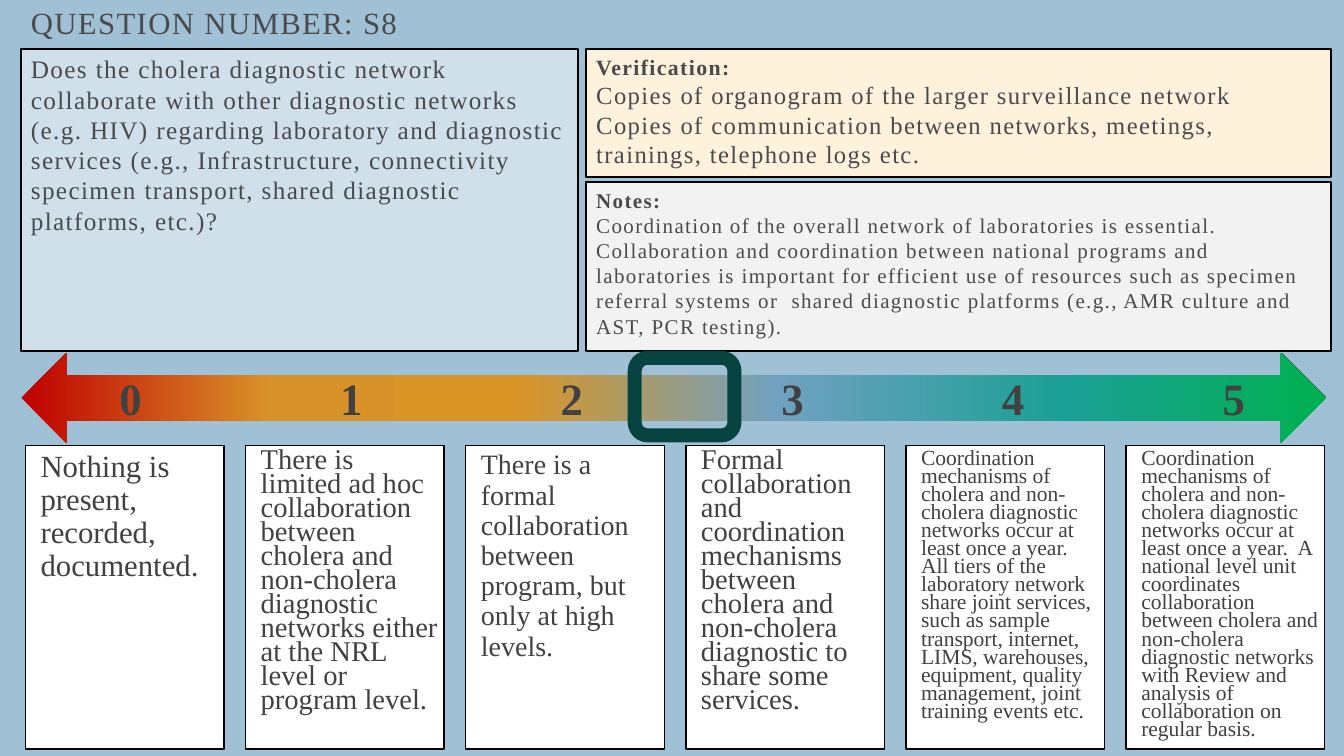
from lxml.etree import SubElement
from pptx import Presentation
from pptx.dml.color import RGBColor
from pptx.enum.shapes import MSO_SHAPE as Kind
from pptx.enum.text import MSO_ANCHOR as Anchor, PP_ALIGN as Align
from pptx.oxml.ns import qn
from pptx.util import Pt

FONT = "Times New Roman"
SKY = RGBColor(0xA0, 0xC1, 0xD5)
ICE = RGBColor(0xCF, 0xE0, 0xEA)
CREAM = RGBColor(0xFE, 0xF2, 0xDD)
PALE = RGBColor(0xF2, 0xF2, 0xF2)
WHITE = RGBColor(0xFF, 0xFF, 0xFF)
BLACK = RGBColor(0, 0, 0)
SLATE = RGBColor(0x4A, 0x4A, 0x4C)
GRAY = RGBColor(0x41, 0x41, 0x42)
PINE = RGBColor(0x07, 0x44, 0x41)
SCALE = [
    (0, RGBColor(0xC0, 0, 0)),
    (19, RGBColor(0xD9, 0x92, 0x29)),
    (38, RGBColor(0xDA, 0x95, 0x27)),
    (58, RGBColor(0x70, 0xA1, 0xC0)),
    (80, RGBColor(0x1A, 0xA0, 0x95)),
    (100, RGBColor(0, 0xB0, 0x50)),
]

# Score cards: text, size, line spacing
CARDS = [
    ("Nothing is present, recorded, documented.", 22, 0.9),
    ("There is limited ad hoc collaboration between cholera and non-cholera "
     "diagnostic networks either at the NRL level or program level.", 20.4, 0.7),
    ("There is a formal collaboration between program, but only at high "
     "levels.", 20, 0.9),
    ("Formal collaboration and coordination mechanisms between cholera and "
     "non-cholera diagnostic to share some services.", 20.4, 0.7),
    ("Coordination mechanisms of cholera and non-cholera diagnostic networks "
     "occur at least once a year.  All tiers of the laboratory network share "
     "joint services, such as sample transport, internet, LIMS, warehouses, "
     "equipment, quality management, joint training events etc.", 15.4, 0.7),
    ("Coordination mechanisms of cholera and non-cholera diagnostic networks "
     "occur at least once a year.  A national level unit coordinates "
     "collaboration between cholera and non-cholera diagnostic networks with "
     "Review and analysis of collaboration on regular basis.", 15.4, 0.7),
]


class Board:
    def __init__(self, slide):
        self.slide = slide
        fill = slide.background.fill
        fill.solid()
        fill.fore_color.rgb = SKY

    def shape(self, kind, box, fill=None, line=None, width=1.5):
        item = self.slide.shapes.add_shape(kind, *map(Pt, box))
        item.shadow.inherit = False
        if fill is None:
            item.fill.background()
        else:
            item.fill.solid()
            item.fill.fore_color.rgb = fill
        if line is None:
            item.line.fill.background()
        else:
            item.line.color.rgb = line
            item.line.width = Pt(width)
        return item

    def text(self, item, lines, color, gap=0, space=None, align=Align.LEFT,
             anchor=Anchor.TOP):
        """Each line is (words, size, bold); gap is the letter spacing."""
        frame = item.text_frame
        frame.word_wrap = True
        frame.vertical_anchor = anchor
        for i, (words, size, bold) in enumerate(lines):
            para = frame.add_paragraph() if i else frame.paragraphs[0]
            para.alignment = align
            if space:
                para.line_spacing = space
            run = para.add_run()
            run.text = words
            font = run.font
            font.name, font.size, font.bold = FONT, Pt(size), bold
            font.color.rgb = color
            if gap:
                run._r.get_or_add_rPr().set("spc", str(gap * 100))

    def label(self, box, line, color, **style):
        item = self.slide.shapes.add_textbox(*map(Pt, box))
        self.text(item, [line], color, anchor=Anchor.MIDDLE, **style)

    def panel(self, box, fill, lines):
        item = self.shape(Kind.RECTANGLE, box, fill, BLACK)
        self.text(item, lines, SLATE, gap=1)

    def card(self, box, words, size, space):
        item = self.shape(Kind.RECTANGLE, box, WHITE, BLACK, 1)
        frame = item.text_frame
        frame.margin_left = Pt(10.8)
        frame.margin_right = frame.margin_top = frame.margin_bottom = Pt(3.6)
        self.text(item, [(words, size, False)], GRAY, space=space)

    def arrow(self, box, stops):
        item = self.shape(Kind.LEFT_RIGHT_ARROW, box)
        item.fill.gradient()
        item.fill.gradient_angle = 0
        group = item._element.spPr.find(qn("a:gradFill")).find(qn("a:gsLst"))
        for old in list(group):
            group.remove(old)
        for spot, color in stops:
            stop = SubElement(group, qn("a:gs"), pos=str(spot * 1000))
            SubElement(stop, qn("a:srgbClr"), val=str(color))


def main():
    deck = Presentation()
    deck.slide_width, deck.slide_height = Pt(960), Pt(540)
    board = Board(deck.slides.add_slide(deck.slide_layouts[6]))

    # Title and question
    board.label((15, 2, 380, 32.5), ("QUESTION NUMBER: S8", 22, False), SLATE,
                gap=1, space=0.8)
    board.panel((15, 34.8, 397.7, 215.8), ICE, [
        ("Does the cholera diagnostic network collaborate with other "
         "diagnostic networks (e.g. HIV) regarding laboratory and diagnostic "
         "services (e.g., Infrastructure, connectivity specimen transport, "
         "shared diagnostic platforms, etc.)?", 18, False)])

    # Verification and notes
    board.panel((418.8, 34.8, 532, 91.6), CREAM, [
        ("Verification:", 15.6, True),
        ("Copies of organogram of the larger surveillance network", 17.6, False),
        ("Copies of communication between networks, meetings, trainings, "
         "telephone logs etc.", 17.6, False)])
    board.panel((418.8, 130.1, 532, 120.6), PALE, [
        ("Notes:", 15, True),
        ("Coordination of the overall network of laboratories is essential.",
         15, False),
        ("Collaboration and coordination between national programs and "
         "laboratories is important for efficient use of resources such as "
         "specimen referral systems or  shared diagnostic platforms (e.g., "
         "AMR culture and AST, PCR testing).", 15, False)])

    # Scale with a card under each score
    board.arrow((15.3, 251.9, 931.8, 64.6), SCALE)
    for score, (words, size, space) in enumerate(CARDS):
        board.label((67.4 + 157.6 * score, 273.6, 51.8, 20.9),
                    (str(score), 32, True), GRAY, align=Align.CENTER)
        board.card((18.2 + 157.25 * score, 318.3, 141.8, 216.7),
                   words, size, space)

    # Marker on the scale
    board.shape(Kind.ROUNDED_RECTANGLE, (453.4, 255.6, 71.2, 55.4),
                line=PINE, width=10)

    deck.save("out.pptx")


if __name__ == "__main__":
    main()
